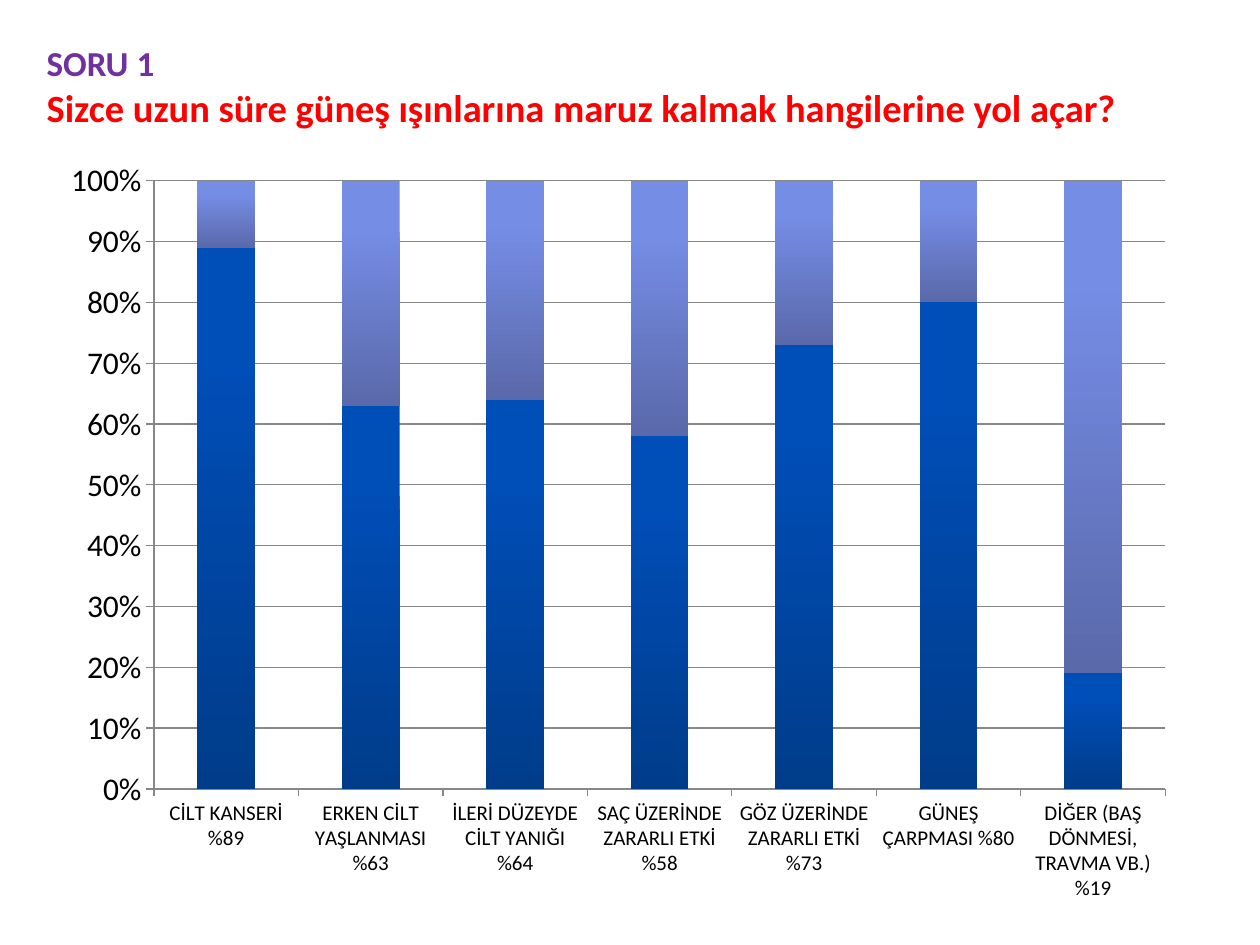
import dataclasses

import pptx
import pptx.chart.data
import pptx.dml.color
import pptx.enum.chart
import pptx.enum.text
import pptx.oxml
import pptx.oxml.ns
import pptx.util

Inches = pptx.util.Inches
Pt = pptx.util.Pt

FONT = "Calibri"
COLORS = {
    "question_number": "7030A0",
    "question": "FF0000",
    "text": "000000",
    "grid": "878787",
    "share_top": "004EB8",
    "share_bottom": "003C8A",
    "rest_top": "768DE6",
    "rest_bottom": "5A69AA",
}


@dataclasses.dataclass
class TitleLine:
    text: str
    size: int
    color: str


@dataclasses.dataclass
class Answer:
    label: str
    percent: int


TITLE_LINES = [
    TitleLine("SORU 1", 20, "question_number"),
    TitleLine("Sizce uzun süre güneş ışınlarına maruz kalmak hangilerine yol açar?",
              22, "question"),
]
ANSWERS = [
    Answer("CİLT KANSERİ", 89),
    Answer("ERKEN CİLT YAŞLANMASI", 63),
    Answer("İLERİ DÜZEYDE CİLT YANIĞI", 64),
    Answer("SAÇ ÜZERİNDE ZARARLI ETKİ", 58),
    Answer("GÖZ ÜZERİNDE ZARARLI ETKİ", 73),
    Answer("GÜNEŞ ÇARPMASI", 80),
    Answer("DİĞER (BAŞ DÖNMESİ, TRAVMA VB.)", 19),
]


def rgb(name: str) -> pptx.dml.color.RGBColor:
    return pptx.dml.color.RGBColor.from_string(COLORS[name])


def write_title(shape, lines: list[TitleLine]) -> None:
    shape.left, shape.top = Inches(0.27), Inches(0.28)
    shape.width, shape.height = Inches(10), Inches(0.81)
    frame = shape.text_frame
    frame.word_wrap = True
    frame.auto_size = pptx.enum.text.MSO_AUTO_SIZE.NONE
    frame.vertical_anchor = pptx.enum.text.MSO_ANCHOR.TOP
    frame.text = "\n".join(line.text for line in lines)
    for paragraph, line in zip(frame.paragraphs, lines):
        paragraph.alignment = pptx.enum.text.PP_ALIGN.LEFT
        paragraph.font.name = FONT
        paragraph.font.size = Pt(line.size)
        paragraph.font.bold = True
        paragraph.font.color.rgb = rgb(line.color)


def shade_series(series, name: str) -> None:
    """Fill the bars from top to bottom with the named pair of colours."""
    fill = series.format.fill
    fill.gradient()
    fill.gradient_angle = 270
    for stop, end, position in zip(fill.gradient_stops, ("top", "bottom"), (0.2, 1)):
        stop.color.rgb = rgb(f"{name}_{end}")
        stop.position = position


def style_axis(axis, size: int) -> None:
    axis.major_tick_mark = pptx.enum.chart.XL_TICK_MARK.OUTSIDE
    axis.minor_tick_mark = pptx.enum.chart.XL_TICK_MARK.NONE
    axis.tick_labels.font.size = Pt(size)
    axis.format.line.color.rgb = rgb("grid")
    axis.format.line.width = Pt(0.75)


def place_plot(chart, x: float, y: float, width: float, height: float) -> None:
    """Fix the inner plot area, in fractions of the chart."""
    sizes = "".join(f'<c:{tag} val="{value}"/>' for tag, value in
                    (("x", x), ("y", y), ("w", width), ("h", height)))
    layout = pptx.oxml.parse_xml(
        f'<c:layout {pptx.oxml.ns.nsdecls("c")}><c:manualLayout>'
        '<c:layoutTarget val="inner"/><c:xMode val="edge"/><c:yMode val="edge"/>'
        f'{sizes}</c:manualLayout></c:layout>')
    plot_area = chart.plots[0]._element.getparent()
    for old_layout in plot_area.findall(pptx.oxml.ns.qn("c:layout")):
        plot_area.remove(old_layout)
    plot_area.insert(0, layout)


def add_answer_chart(slide, answers: list[Answer]) -> None:
    data = pptx.chart.data.CategoryChartData()
    data.categories = [f"{answer.label} %{answer.percent}" for answer in answers]
    data.add_series("Series 1", [answer.percent for answer in answers])
    data.add_series("Series 2", [100 - answer.percent for answer in answers])
    chart = slide.shapes.add_chart(
        pptx.enum.chart.XL_CHART_TYPE.COLUMN_STACKED_100,
        Inches(0.41), Inches(1.13), Inches(9.02), Inches(6.11), data).chart
    chart.has_title = False
    chart.has_legend = False
    chart.font.name = FONT
    chart.font.size = Pt(18)
    chart.font.color.rgb = rgb("text")

    # Bars
    plot = chart.plots[0]
    plot.vary_by_categories = False
    plot.gap_width = 150
    plot.overlap = 100
    for series, name in zip(plot.series, ("share", "rest")):
        shade_series(series, name)

    # Axes and grid
    style_axis(chart.category_axis, 12)
    style_axis(chart.value_axis, 18)
    chart.value_axis.maximum_scale = 1
    chart.value_axis.minimum_scale = 0
    chart.value_axis.major_unit = 0.1
    chart.value_axis.tick_labels.number_format = "0%"
    chart.value_axis.tick_labels.number_format_is_linked = False
    chart.value_axis.has_major_gridlines = True
    grid_line = chart.value_axis.major_gridlines.format.line
    grid_line.color.rgb = rgb("grid")
    grid_line.width = Pt(0.75)
    place_plot(chart, 0.09, 0.05, 0.89, 0.79)


def main() -> None:
    presentation = pptx.Presentation()
    presentation.slide_width, presentation.slide_height = Inches(10), Inches(7.5)
    title_only = presentation.slide_layouts[5]
    slide = presentation.slides.add_slide(title_only)
    add_answer_chart(slide, ANSWERS)
    write_title(slide.shapes.title, TITLE_LINES)
    presentation.save("out.pptx")


if __name__ == "__main__":
    main()
